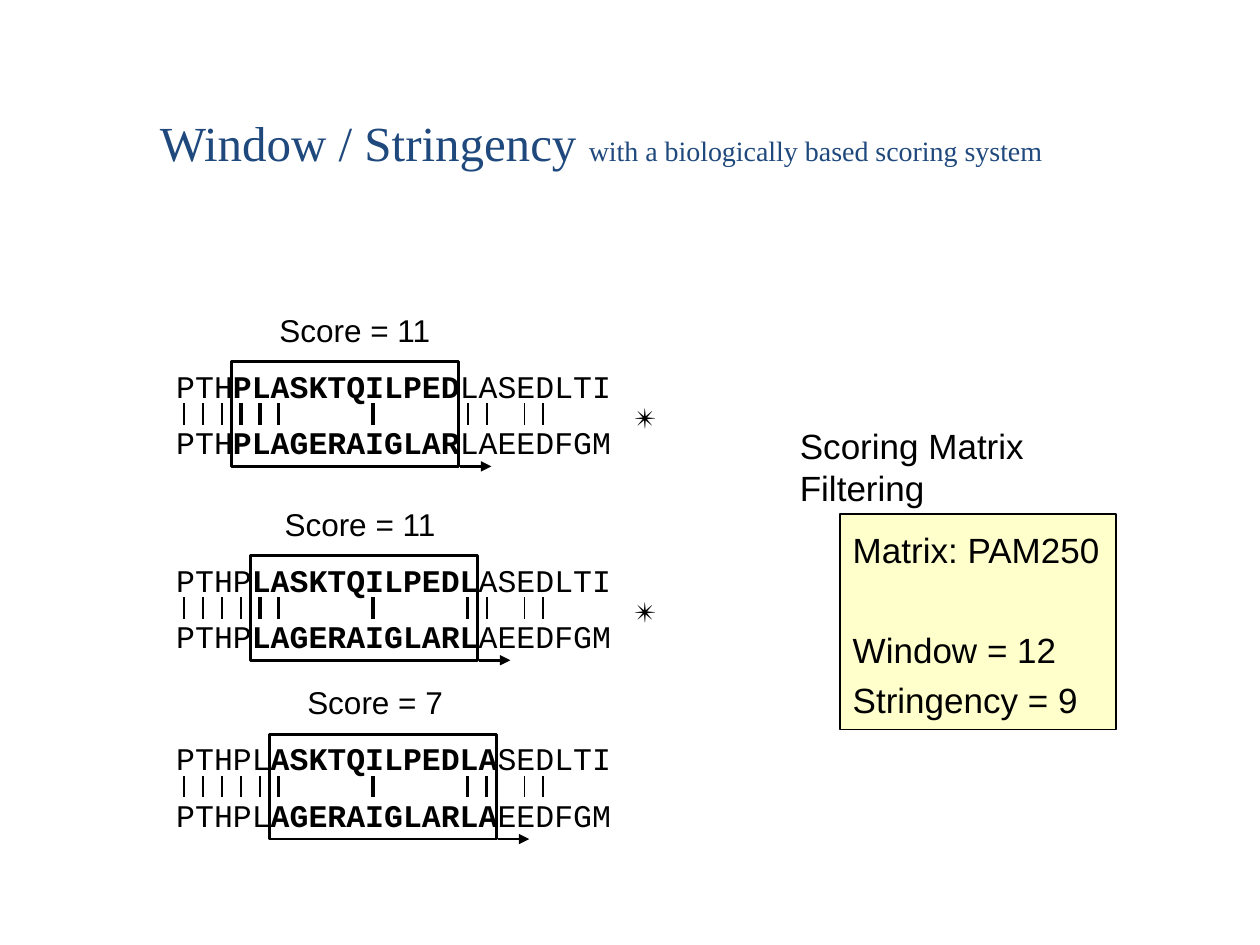
"""Build a slide showing a scoring window sliding along two aligned sequences."""

from typing import NamedTuple

from lxml.etree import SubElement
from pptx import Presentation
from pptx.dml.color import RGBColor
from pptx.enum.shapes import MSO_CONNECTOR, MSO_SHAPE
from pptx.enum.text import MSO_ANCHOR, MSO_AUTO_SIZE, PP_ALIGN
from pptx.oxml.ns import qn
from pptx.util import Pt

COLORS = {"ink": "000000", "title": "1F497D", "panel": "FFFFCC"}
SEQUENCES = ("PTHPLASKTQILPEDLASEDLTI", "PTHPLAGERAIGLARLAEEDFGM")
WINDOW = 12
PITCH = 10.8
TEXT_LEFT = 93.6
INSET = 7.2


class Box(NamedTuple):
    left: float
    top: float
    width: float
    height: float


class Alignment(NamedTuple):
    top: float
    start: int
    score: int
    label_left: float
    label_width: float
    passes: bool


ALIGNMENTS = (
    Alignment(206, 3, 11, 152.6, 102.2, True),
    Alignment(316.8, 4, 11, 155.5, 102.2, True),
    Alignment(419, 5, 7, 168.5, 97.2, False),
)


def color(name: str) -> RGBColor:
    return RGBColor.from_string(COLORS[name])


def add_run(paragraph, text: str, ink: str = "ink", **formats) -> None:
    run = paragraph.add_run()
    run.text = text
    for attribute, value in formats.items():
        setattr(run.font, attribute, value)
    run.font.color.rgb = color(ink)


def add_text(slide, box: Box, runs: list, wrap: bool = False, **formats) -> None:
    shape = slide.shapes.add_textbox(*map(Pt, box))
    shape.text_frame.word_wrap = wrap
    shape.text_frame.auto_size = MSO_AUTO_SIZE.SHAPE_TO_FIT_TEXT
    for text, bold in runs:
        add_run(shape.text_frame.paragraphs[0], text, bold=bold, **formats)


def add_line(slide, start: tuple, end: tuple, width: float, arrow: bool = False) -> None:
    connector = slide.shapes.add_connector(
        MSO_CONNECTOR.STRAIGHT, *map(Pt, (*start, *end))
    )
    connector.line.color.rgb = color("ink")
    connector.line.width = Pt(width)
    if arrow:
        SubElement(connector.line._get_or_add_ln(), qn("a:tailEnd"), type="triangle")
    SubElement(connector._element.spPr, qn("a:effectLst"))


def add_rectangle(slide, box: Box, width: float, fill: str = ""):
    shape = slide.shapes.add_shape(MSO_SHAPE.RECTANGLE, *map(Pt, box))
    shape.shadow.inherit = False
    shape.line.color.rgb = color("ink")
    shape.line.width = Pt(width)
    if fill:
        shape.fill.solid()
        shape.fill.fore_color.rgb = color(fill)
    else:
        shape.fill.background()
    return shape


def add_alignment(slide, alignment: Alignment) -> None:
    top, start = alignment.top, alignment.start
    end = start + WINDOW
    label = Box(alignment.label_left, top - 32, alignment.label_width, 29)
    add_text(slide, label, [(f"Score = {alignment.score}", False)],
             name="Arial", size=Pt(18))
    for row, sequence in enumerate(SEQUENCES):
        runs = [(sequence[:start], False), (sequence[start:end], True),
                (sequence[end:], False)]
        add_text(slide, Box(TEXT_LEFT, top + 32.4 * row, 262.8, 29), runs,
                 name="Courier New", size=Pt(18))
    for column, (upper, lower) in enumerate(zip(*SEQUENCES)):
        if upper == lower:
            x = TEXT_LEFT + INSET + PITCH * (column + 0.5) - 0.9
            width = 2 if start <= column < end else 1
            add_line(slide, (x, top + 24.5), (x, top + 36.7), width)
    window = Box(TEXT_LEFT + INSET + PITCH * start - 0.7, top + 0.7,
                 PITCH * WINDOW, 59.8)
    add_rectangle(slide, window, 1.5)
    right, bottom = window.left + window.width, window.top + window.height
    add_line(slide, (right + 0.7, bottom), (right + 18.7, bottom), 1.5, arrow=True)
    if alignment.passes:
        add_text(slide, Box(355, top + 19.4, 28.8, 26.6), [("✴", False)],
                 name="Courier New", size=Pt(16))


def add_title(slide) -> None:
    title = slide.shapes.title
    frame = title.text_frame
    placement = Box(84.2, 36, 612, 90)
    for attribute, value in zip(placement._fields, placement):
        setattr(title, attribute, Pt(value))
    frame.vertical_anchor = MSO_ANCHOR.MIDDLE
    frame.auto_size = MSO_AUTO_SIZE.NONE
    paragraph = frame.paragraphs[0]
    paragraph.alignment = PP_ALIGN.LEFT
    for text, size in (("Window / Stringency ", 28),
                       ("with a biologically based scoring system", 16)):
        add_run(paragraph, text, "title", name="Times New Roman", size=Pt(size))


def add_settings(slide) -> None:
    add_text(slide, Box(450, 239, 216, 31), [("Scoring Matrix Filtering", False)],
             wrap=True, name="Arial", size=Pt(20))
    panel = add_rectangle(slide, Box(480.2, 293.8, 157.7, 123.1), 1, "panel")
    frame = panel.text_frame
    frame.word_wrap = False
    frame.auto_size = MSO_AUTO_SIZE.SHAPE_TO_FIT_TEXT
    frame.vertical_anchor = MSO_ANCHOR.TOP
    matrix, limits = frame.paragraphs[0], frame.add_paragraph()
    limits.space_before = Pt(28)
    for paragraph, lines in ((matrix, ["Matrix: PAM250"]),
                             (limits, ["Window = 12", "Stringency = 9"])):
        paragraph.alignment = PP_ALIGN.LEFT
        paragraph.line_spacing = 1.2
        for index, line in enumerate(lines):
            if index:
                paragraph.add_line_break()
            add_run(paragraph, line, name="Arial", size=Pt(20))


def main() -> None:
    presentation = Presentation()
    presentation.slide_width, presentation.slide_height = Pt(720), Pt(540)
    slide = presentation.slides.add_slide(presentation.slide_layouts[5])
    add_title(slide)
    for alignment in ALIGNMENTS:
        add_alignment(slide, alignment)
    add_settings(slide)
    presentation.save("out.pptx")


if __name__ == "__main__":
    main()
